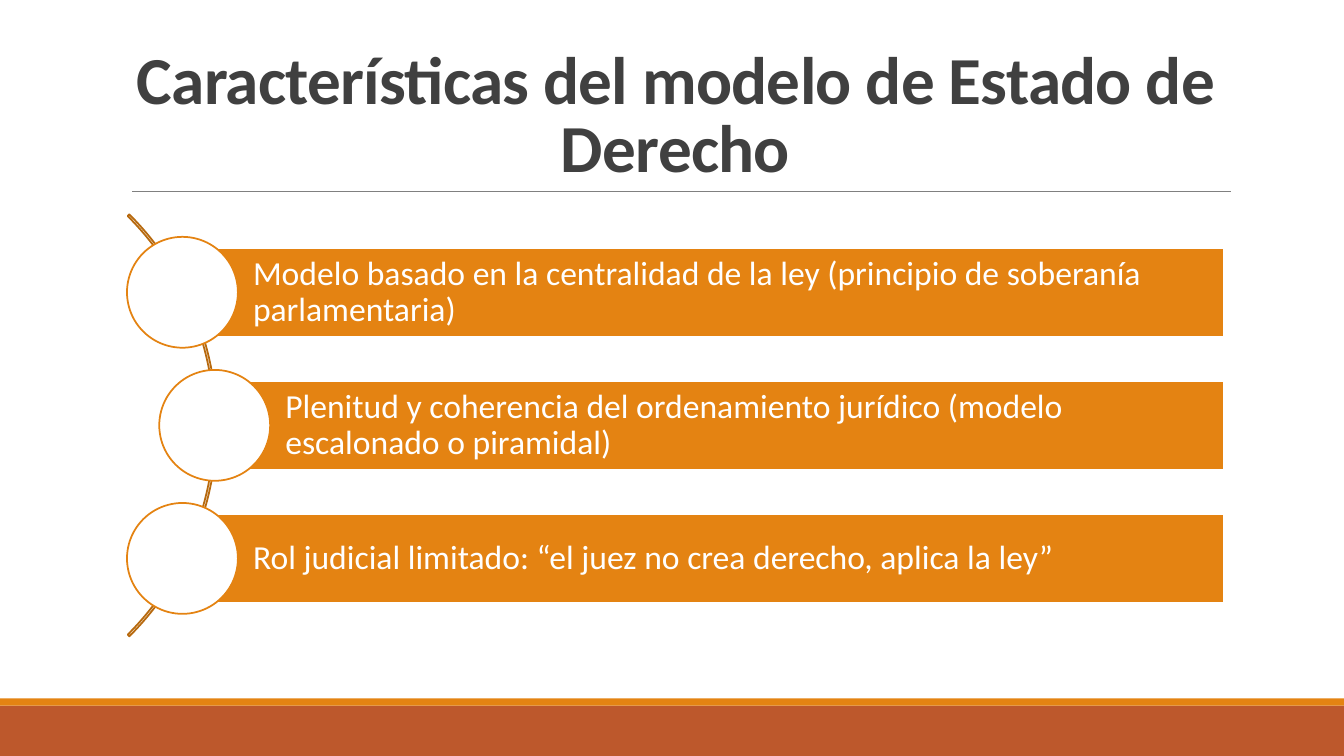
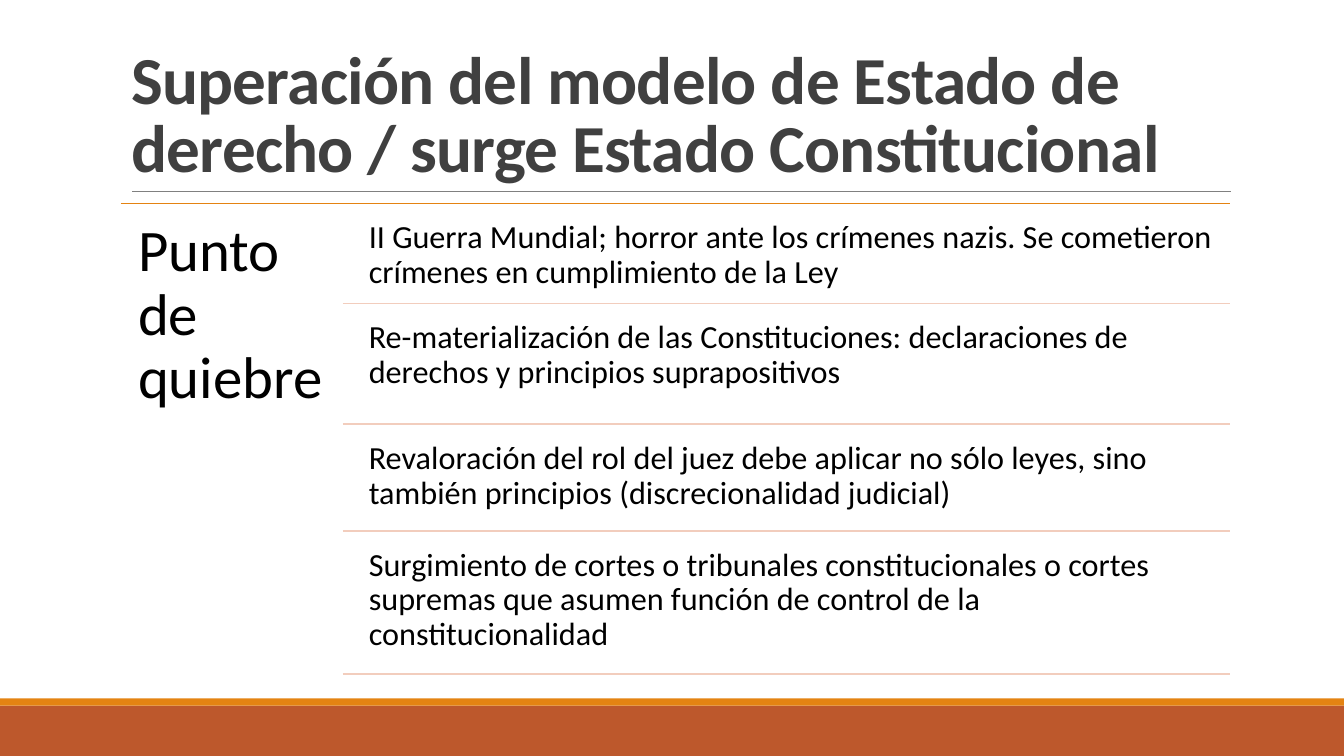
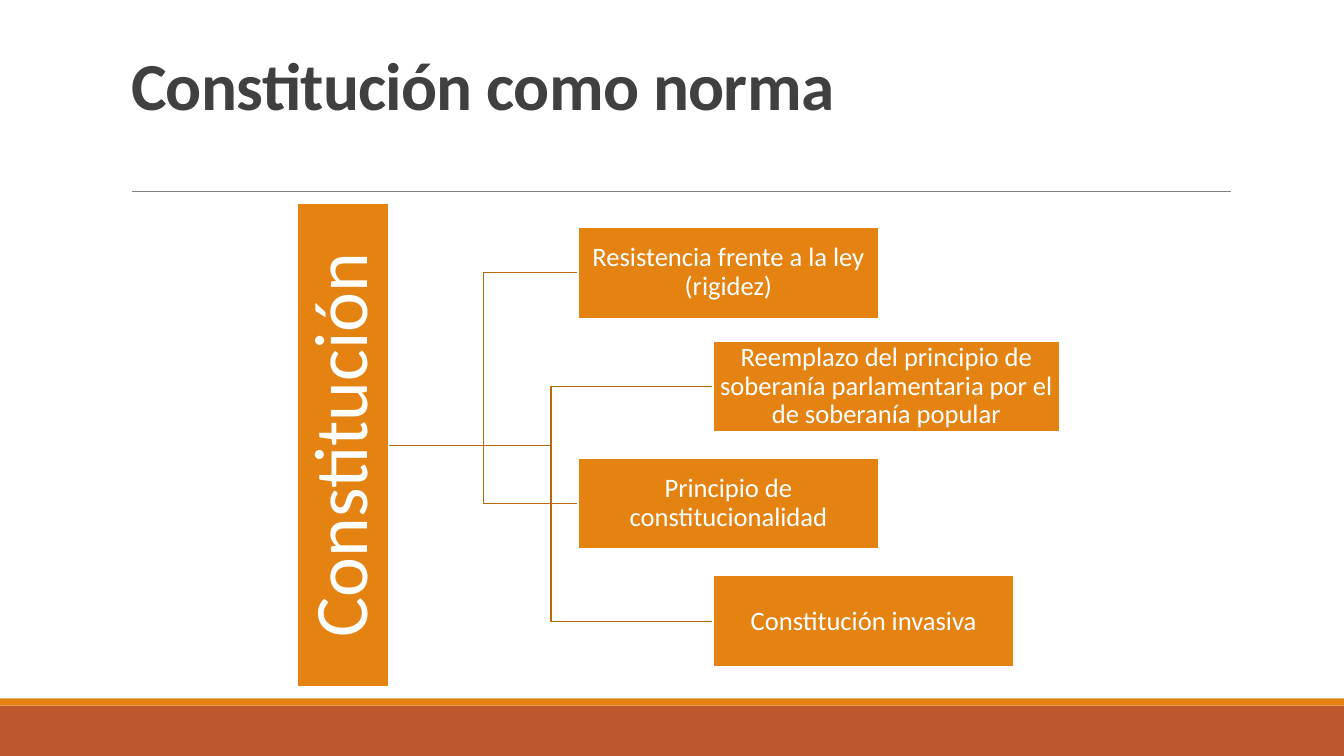
from dataclasses import dataclass

from lxml import etree
from pptx import Presentation
from pptx.dml.color import RGBColor
from pptx.enum.shapes import MSO_CONNECTOR, MSO_SHAPE
from pptx.enum.text import MSO_ANCHOR, MSO_AUTO_SIZE, PP_ALIGN
from pptx.oxml.ns import qn
from pptx.slide import Slide, SlideLayout
from pptx.text.text import TextFrame
from pptx.util import Inches, Pt

RECT = MSO_SHAPE.RECTANGLE
OVAL = MSO_SHAPE.OVAL
ARC = MSO_SHAPE.BLOCK_ARC
STRAIGHT = MSO_CONNECTOR.STRAIGHT
ELBOW = MSO_CONNECTOR.ELBOW
TOP = MSO_ANCHOR.TOP
MIDDLE = MSO_ANCHOR.MIDDLE
BOTTOM = MSO_ANCHOR.BOTTOM
LEFT = PP_ALIGN.LEFT
CENTER = PP_ALIGN.CENTER
NO_FIT = MSO_AUTO_SIZE.NONE

FONT = "Calibri"
WHITE = RGBColor(0xFF, 0xFF, 0xFF)
BLACK = RGBColor(0x00, 0x00, 0x00)
DARK = RGBColor(0x40, 0x40, 0x40)
GRAY = RGBColor(0x80, 0x80, 0x80)
ORANGE = RGBColor(0xE4, 0x83, 0x12)
BROWN = RGBColor(0xB7, 0x69, 0x0E)
RUST = RGBColor(0xBD, 0x58, 0x2C)
PINK = RGBColor(0xF2, 0xCD, 0xBD)

WIDTH, HEIGHT = 13.33, 7.5
THIN = 1.25


@dataclass
class Box:
    left: float
    top: float
    width: float
    height: float

    def lengths(self) -> list:
        return [Inches(v) for v in (self.left, self.top, self.width, self.height)]


@dataclass
class Style:
    size: float
    color: RGBColor
    align: PP_ALIGN = LEFT
    anchor: MSO_ANCHOR = TOP
    inset: float = 0.1
    indent: float | None = None
    spacing: float = 0.9


@dataclass
class Point:
    text: str
    left: float


@dataclass
class Row:
    text: str
    bottom: float


@dataclass
class Branch:
    text: str
    box: Box


TITLE = Style(48, DARK, anchor=BOTTOM, spacing=0.85)
BAR = Style(24, WHITE, anchor=MIDDLE, inset=0.07, indent=0.7)
LEAD = Style(42, BLACK, inset=0.17)
ITEM = Style(23, BLACK)
TRUNK = Style(54, WHITE, CENTER, MIDDLE, 0.04)
LEAF = Style(19, WHITE, CENTER, MIDDLE, 0.01)

POINTS = [
    Point("Modelo basado en la centralidad de la ley (principio de soberanía parlamentaria)", 1.81),
    Point("Plenitud y coherencia del ordenamiento jurídico (modelo escalonado o piramidal)", 2.13),
    Point("Rol judicial limitado: “el juez no crea derecho, aplica la ley”", 1.81),
]

ROWS = [
    Row("II Guerra Mundial; horror ante los crímenes nazis. Se cometieron crímenes "
        "en cumplimiento de la Ley", 3.01),
    Row("Re-materialización de las Constituciones: declaraciones de derechos "
        "y principios suprapositivos", 4.21),
    Row("Revaloración del rol del juez debe aplicar no sólo leyes, sino también "
        "principios (discrecionalidad judicial)", 5.27),
    Row("Surgimiento de cortes o tribunales constitucionales o cortes supremas "
        "que asumen función de control de la constitucionalidad", 6.69),
]

BRANCHES = [
    Branch("Resistencia frente a la ley (rigidez)", Box(5.73, 2.25, 2.99, 0.91)),
    Branch("Reemplazo del principio de soberanía parlamentaria por el de soberanía popular",
           Box(7.07, 3.38, 3.44, 0.91)),
    Branch("Principio de constitucionalidad", Box(5.73, 4.54, 2.99, 0.91)),
    Branch("Constitución invasiva", Box(7.07, 5.71, 2.99, 0.91)),
]


def write(frame: TextFrame, text: str, style: Style) -> None:
    frame.text = text
    frame.word_wrap = True
    frame.auto_size = NO_FIT
    frame.vertical_anchor = style.anchor
    side = Inches(style.inset)
    frame.margin_left = side if style.indent is None else Inches(style.indent)
    frame.margin_right = frame.margin_top = frame.margin_bottom = side
    for para in frame.paragraphs:
        para.alignment = style.align
        para.line_spacing = style.spacing
        for run in para.runs:
            run.font.name = FONT
            run.font.size = Pt(style.size)
            run.font.color.rgb = style.color


def draw(slide: Slide, kind: MSO_SHAPE, box: Box, fill: RGBColor | None,
         line: RGBColor | None = None):
    shape = slide.shapes.add_shape(kind, *box.lengths())
    shape.shadow.inherit = False
    if fill is None:
        shape.fill.background()
    else:
        shape.fill.solid()
        shape.fill.fore_color.rgb = fill
    if line is None:
        shape.line.fill.background()
    else:
        shape.line.color.rgb = line
        shape.line.width = Pt(THIN)
    return shape


def link(slide: Slide, start: tuple[float, float], end: tuple[float, float],
         color: RGBColor, width: float = THIN, kind: MSO_CONNECTOR = STRAIGHT):
    line = slide.shapes.add_connector(kind, *(Inches(v) for v in start + end))
    line.line.color.rgb = color
    line.line.width = Pt(width)
    etree.SubElement(line.element.spPr, qn("a:effectLst"))
    return line


def label(slide: Slide, box: Box, text: str, style: Style) -> None:
    write(slide.shapes.add_textbox(*box.lengths()).text_frame, text, style)


def head(slide: Slide, text: str, align: PP_ALIGN = LEFT, height: float = 1.59) -> None:
    title = slide.shapes.title
    title.left, title.top, title.width, title.height = Box(1.2, 0.31, 11, height).lengths()
    write(title.text_frame, text, TITLE)
    title.text_frame.margin_top = title.text_frame.margin_bottom = Inches(0.05)
    para = title.text_frame.paragraphs[0]
    para.alignment = align
    for run in para.runs:
        run.font.bold = True
        run.font.element.set("spc", "-50") if hasattr(run.font, "element") else \
            run._r.get_or_add_rPr().set("spc", "-50")


def share(slide: Slide, layout: SlideLayout) -> None:
    parts = [
        draw(slide, RECT, Box(0, 7, WIDTH, 0.5), RUST),
        draw(slide, RECT, Box(0, 6.93, WIDTH, 0.07), ORANGE),
        link(slide, (1.31, 1.9), (12.21, 1.9), GRAY, 0.5),
    ]
    for num, part in enumerate(parts):
        part.element.xpath(".//p:cNvPr")[0].set("id", str(90 + num))
        layout.shapes.element.insert(2 + num, part.element)


def model(slide: Slide) -> None:
    head(slide, "Características del modelo de Estado de Derecho", CENTER)
    arc = draw(slide, ARC, Box(-3.77, 1.26, 5.92, 5.92), None, BROWN)
    for num, value in enumerate((189, 27, 0.004)):
        arc.adjustments[num] = value
    for num, point in enumerate(POINTS):
        top = 2.46 + 1.32 * num
        bar = draw(slide, RECT, Box(point.left, top, 12.14 - point.left, 0.88), ORANGE, WHITE)
        write(bar.text_frame, point.text, BAR)
        draw(slide, OVAL, Box(point.left - 0.55, top - 0.11, 1.1, 1.1), WHITE, ORANGE)


def shift(slide: Slide) -> None:
    head(slide, "Superación del modelo de Estado de derecho / surge Estado Constitucional")
    top = 2.02
    link(slide, (1.2, top), (12.2, top), ORANGE)
    label(slide, Box(1.2, top, 2.2, 4.75), "Punto de quiebre", LEAD)
    for row in ROWS:
        start = top + 0.07
        label(slide, Box(3.56, start, 8.63, row.bottom - start), row.text, ITEM)
        link(slide, (3.4, row.bottom), (12.2, row.bottom), PINK)
        top = row.bottom


def norm(slide: Slide) -> None:
    head(slide, "Constitución como norma", height=0.97)
    for branch in reversed(BRANCHES):
        box = branch.box
        link(slide, (3.86, 4.42), (box.left, box.top + box.height / 2), BROWN, kind=ELBOW)
    trunk = draw(slide, RECT, Box(1, 3.96, 4.8, 0.91), ORANGE, WHITE)
    trunk.rotation = 270
    write(trunk.text_frame, "Constitución", TRUNK)
    for branch in BRANCHES:
        leaf = draw(slide, RECT, branch.box, ORANGE, WHITE)
        write(leaf.text_frame, branch.text, LEAF)


def main() -> None:
    deck = Presentation()
    deck.slide_width, deck.slide_height = Inches(WIDTH), Inches(HEIGHT)
    layout = deck.slide_layouts[5]
    slides = [deck.slides.add_slide(layout) for _ in range(3)]
    share(slides[0], layout)
    for build, slide in zip((model, shift, norm), slides):
        build(slide)
    deck.save("out.pptx")


if __name__ == "__main__":
    main()
